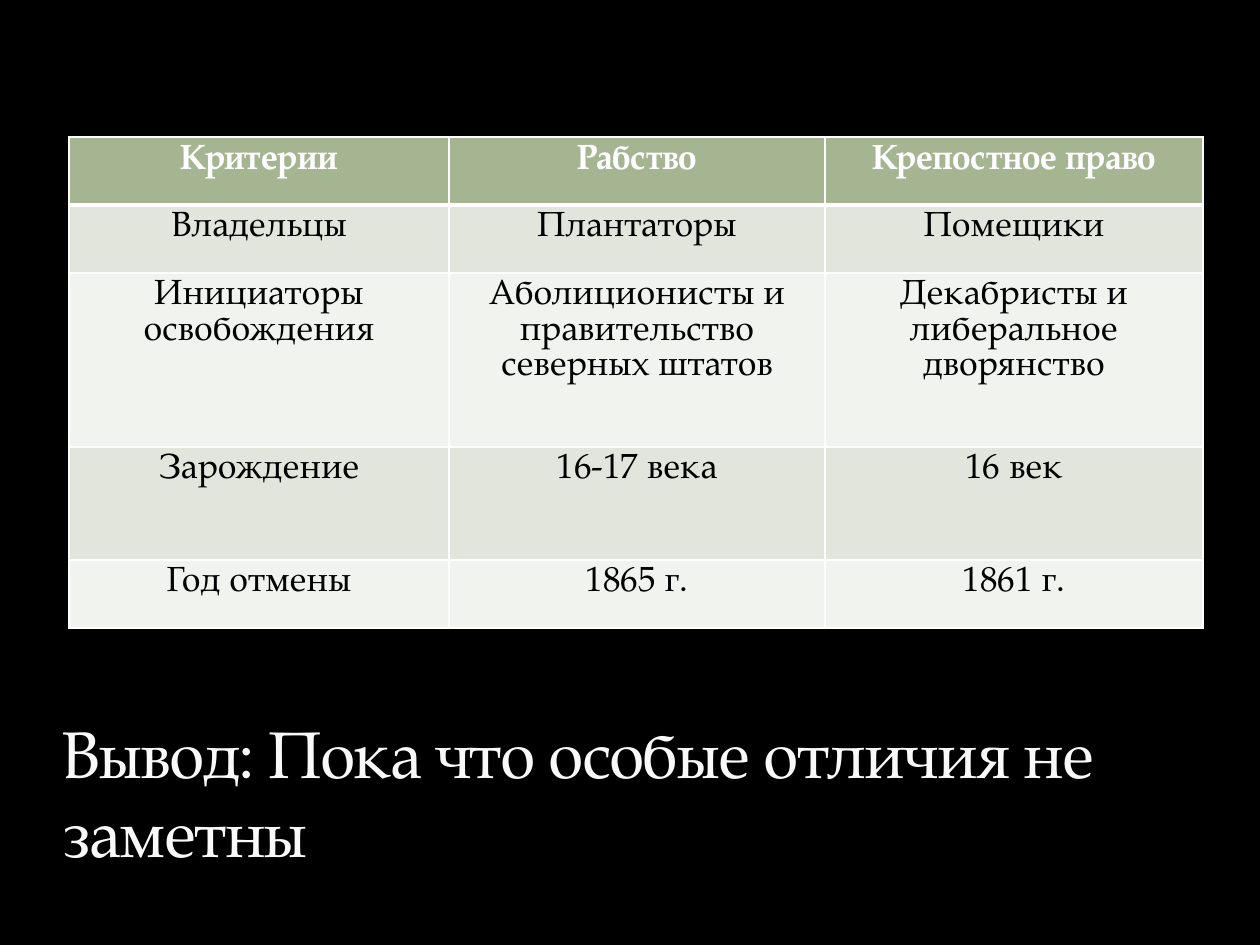
from dataclasses import dataclass

from lxml import etree
from pptx import Presentation
from pptx.dml.color import RGBColor
from pptx.enum.text import MSO_ANCHOR, PP_ALIGN
from pptx.oxml.ns import qn
from pptx.slide import Slide
from pptx.table import _Cell
from pptx.text.text import _Run
from pptx.util import Emu, Pt

CENTER = PP_ALIGN.CENTER
BOTTOM = MSO_ANCHOR.BOTTOM
EMU_PER_PX = 914400 / 126
EMU_PER_POINT = 12700
BLANK_LAYOUT = 6


@dataclass(frozen=True)
class Theme:
    font: str = "TeX Gyre Pagella"
    background: str = "000000"
    title_color: str = "F9F9F9"
    title_outline: str = "3C4422"
    header_fill: str = "A5B592"
    header_color: str = "FFFFFF"
    body_color: str = "000000"
    band_fills: tuple[str, str] = ("E1E5DC", "F0F3EE")
    border: str = "FFFFFF"
    title_size: float = 37.8
    cell_size: float = 20
    cell_line_spacing: float = 20.3
    thin_border: int = 1
    thick_border: int = 3


@dataclass(frozen=True)
class Box:
    left: int
    top: int
    width: int
    height: int

    def emu(self) -> tuple[Emu, Emu, Emu, Emu]:
        return px(self.left), px(self.top), px(self.width), px(self.height)


@dataclass(frozen=True)
class TableRow:
    height: int
    texts: tuple[str, str, str]


THEME = Theme()
TABLE_BOX = Box(69, 137, 1134, 491)
CONCLUSION_BOX = Box(49, 709, 1134, 168)
COLUMN_WIDTHS = (380, 376, 378)
ROWS = (
    TableRow(68, ("Критерии", "Рабство", "Крепостное право")),
    TableRow(68, ("Владельцы", "Плантаторы", "Помещики")),
    TableRow(174, (
        "Инициаторы освобождения",
        "Аболиционисты и правительство северных штатов",
        "Декабристы и либеральное дворянство",
    )),
    TableRow(113, ("Зарождение", "16-17 века", "16 век")),
    TableRow(68, ("Год отмены", "1865 г.", "1861 г.")),
)
CONCLUSION = "Вывод: Пока что особые отличия не заметны"


def px(length: int) -> Emu:
    return Emu(round(length * EMU_PER_PX))


def format_run(run: _Run, size: float, color: str, bold: bool = False) -> None:
    run.font.name = THEME.font
    run.font.size = Pt(size)
    run.font.bold = bold
    run.font.color.rgb = RGBColor.from_string(color)


def make_line(tag: str, points: float, color: str, alpha: int = 100) -> etree._Element:
    """Return a solid line element, with alpha in percent."""
    line = etree.Element(qn(tag), w=str(round(points * EMU_PER_POINT)))
    fill = etree.SubElement(line, qn("a:solidFill"))
    rgb = etree.SubElement(fill, qn("a:srgbClr"), val=color)
    if alpha < 100:
        etree.SubElement(rgb, qn("a:alpha"), val=str(alpha * 1000))
    return line


def set_borders(cell: _Cell, top: int, bottom: int) -> None:
    thin = THEME.thin_border
    sides = (("a:lnL", thin), ("a:lnR", thin), ("a:lnT", top), ("a:lnB", bottom))
    properties = cell._tc.get_or_add_tcPr()
    for position, (tag, points) in enumerate(sides):
        properties.insert(position, make_line(tag, points, THEME.border))


def format_cell(cell: _Cell, text: str, row_index: int) -> None:
    is_header = row_index == 0
    fill = THEME.header_fill if is_header else THEME.band_fills[(row_index - 1) % 2]
    color = THEME.header_color if is_header else THEME.body_color
    cell.fill.solid()
    cell.fill.fore_color.rgb = RGBColor.from_string(fill)
    set_borders(
        cell,
        top=THEME.thick_border if row_index == 1 else THEME.thin_border,
        bottom=THEME.thick_border if is_header else THEME.thin_border,
    )
    cell.text_frame.text = text
    paragraph = cell.text_frame.paragraphs[0]
    paragraph.alignment = CENTER
    paragraph.line_spacing = Pt(THEME.cell_line_spacing)
    format_run(paragraph.runs[0], THEME.cell_size, color, is_header)


def add_comparison_table(slide: Slide) -> None:
    shape = slide.shapes.add_table(len(ROWS), len(COLUMN_WIDTHS), *TABLE_BOX.emu())
    table = shape.table
    for column, width in zip(table.columns, COLUMN_WIDTHS):
        column.width = px(width)
    for row_index, row in enumerate(ROWS):
        table.rows[row_index].height = px(row.height)
        for column_index, text in enumerate(row.texts):
            format_cell(table.cell(row_index, column_index), text, row_index)


def add_conclusion(slide: Slide) -> None:
    text_frame = slide.shapes.add_textbox(*CONCLUSION_BOX.emu()).text_frame
    text_frame.word_wrap = True
    text_frame.vertical_anchor = BOTTOM
    text_frame.text = CONCLUSION
    run = text_frame.paragraphs[0].runs[0]
    format_run(run, THEME.title_size, THEME.title_color)
    properties = run._r.get_or_add_rPr()
    properties.set("spc", "-100")
    properties.insert(0, make_line("a:ln", 0.25, THEME.title_outline, alpha=25))


def main() -> None:
    presentation = Presentation()
    presentation.slide_width = px(1260)
    presentation.slide_height = px(945)
    slide = presentation.slides.add_slide(presentation.slide_layouts[BLANK_LAYOUT])
    slide.background.fill.solid()
    slide.background.fill.fore_color.rgb = RGBColor.from_string(THEME.background)
    add_conclusion(slide)
    add_comparison_table(slide)
    presentation.save("out.pptx")


if __name__ == "__main__":
    main()
